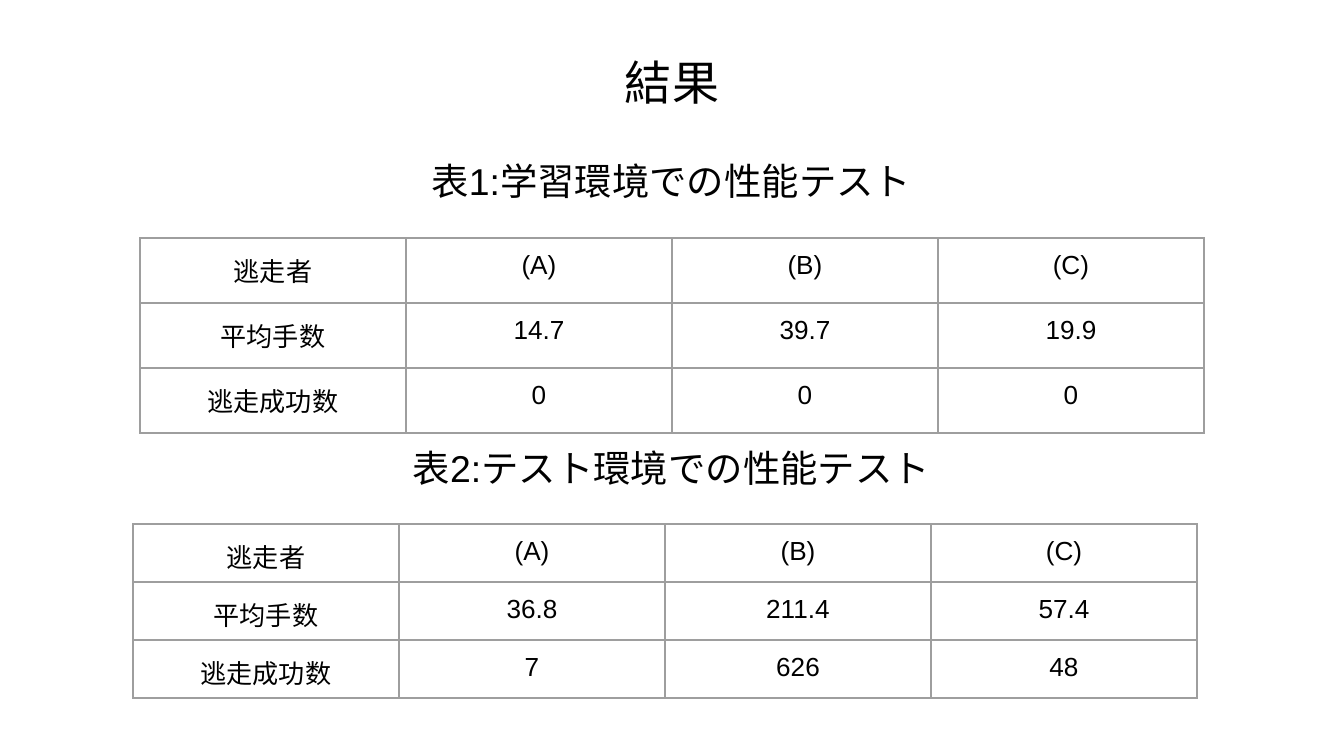
from pptx import Presentation
from pptx.dml.color import RGBColor
from pptx.enum.text import MSO_ANCHOR, PP_ALIGN
from pptx.oxml import parse_xml
from pptx.oxml.ns import nsdecls
from pptx.util import Emu, Pt

PIXELS_PER_INCH = 134.4
COLORS = {"background": "FFFFFF", "text": "000000", "border": "9E9E9E"}


def px(length):
    return Emu(round(length * 914400 / PIXELS_PER_INCH))


class SlideBuilder:
    """Holds the shared style and the slide being filled."""

    font_name = "Arial"
    inset = px(13)
    border_width = Pt(0.75)

    def __init__(self, slide):
        self.slide = slide
        fill = slide.background.fill
        fill.solid()
        fill.fore_color.rgb = RGBColor.from_string(COLORS["background"])

    def fill_text(self, text_frame, text, size):
        paragraph = text_frame.paragraphs[0]
        paragraph.text = text
        paragraph.alignment = PP_ALIGN.CENTER
        paragraph.font.name = self.font_name
        paragraph.font.size = Pt(size)
        paragraph.font.color.rgb = RGBColor.from_string(COLORS["text"])

    def set_insets(self, target):
        target.margin_left = target.margin_right = self.inset
        target.margin_top = target.margin_bottom = self.inset
        target.vertical_anchor = MSO_ANCHOR.TOP

    def text(self, text, left, top, width, height, size):
        shape = self.slide.shapes.add_textbox(px(left), px(top), px(width), px(height))
        shape.text_frame.word_wrap = True
        self.set_insets(shape.text_frame)
        self.fill_text(shape.text_frame, text, size)

    def cell_borders(self, cell):
        properties = cell._tc.get_or_add_tcPr()
        for position, side in enumerate(("lnL", "lnR", "lnT", "lnB")):
            line = parse_xml(
                f'<a:{side} {nsdecls("a")} w="{self.border_width}"><a:solidFill>'
                f'<a:srgbClr val="{COLORS["border"]}"/></a:solidFill></a:{side}>'
            )
            properties.insert(position, line)

    def table(self, rows, left, top, column_width, row_height, size=14):
        column_count = len(rows[0])
        table = self.slide.shapes.add_table(
            len(rows), column_count, px(left), px(top),
            px(column_width * column_count), px(row_height * len(rows)),
        ).table
        table.first_row = table.horz_banding = False
        for column in table.columns:
            column.width = px(column_width)
        for row_index, values in enumerate(rows):
            table.rows[row_index].height = px(row_height)
            for column_index, value in enumerate(values):
                cell = table.cell(row_index, column_index)
                self.set_insets(cell)
                cell.fill.background()
                self.cell_borders(cell)
                self.fill_text(cell.text_frame, value, size)


def main():
    presentation = Presentation()
    presentation.slide_width, presentation.slide_height = px(1344), px(756)
    builder = SlideBuilder(presentation.slides.add_slide(presentation.slide_layouts[6]))

    # Title
    builder.text("結果", 46, 40, 1252, 85, size=25.2)

    # Result tables with their captions
    header = ["逃走者", "(A)", "(B)", "(C)"]
    results = [
        ("表1:学習環境での性能テスト", 145, 140, 238, 65,
         ["14.7", "39.7", "19.9"], ["0", "0", "0"]),
        ("表2:テスト環境での性能テスト", 432, 133, 524, 58,
         ["36.8", "211.4", "57.4"], ["7", "626", "48"]),
    ]
    for caption, caption_top, left, top, row_height, moves, escapes in results:
        rows = [header, ["平均手数", *moves], ["逃走成功数", *escapes]]
        builder.table(rows, left, top, column_width=266, row_height=row_height)
        builder.text(caption, 390, caption_top, 563, 73, size=20)

    presentation.save("out.pptx")


if __name__ == "__main__":
    main()
